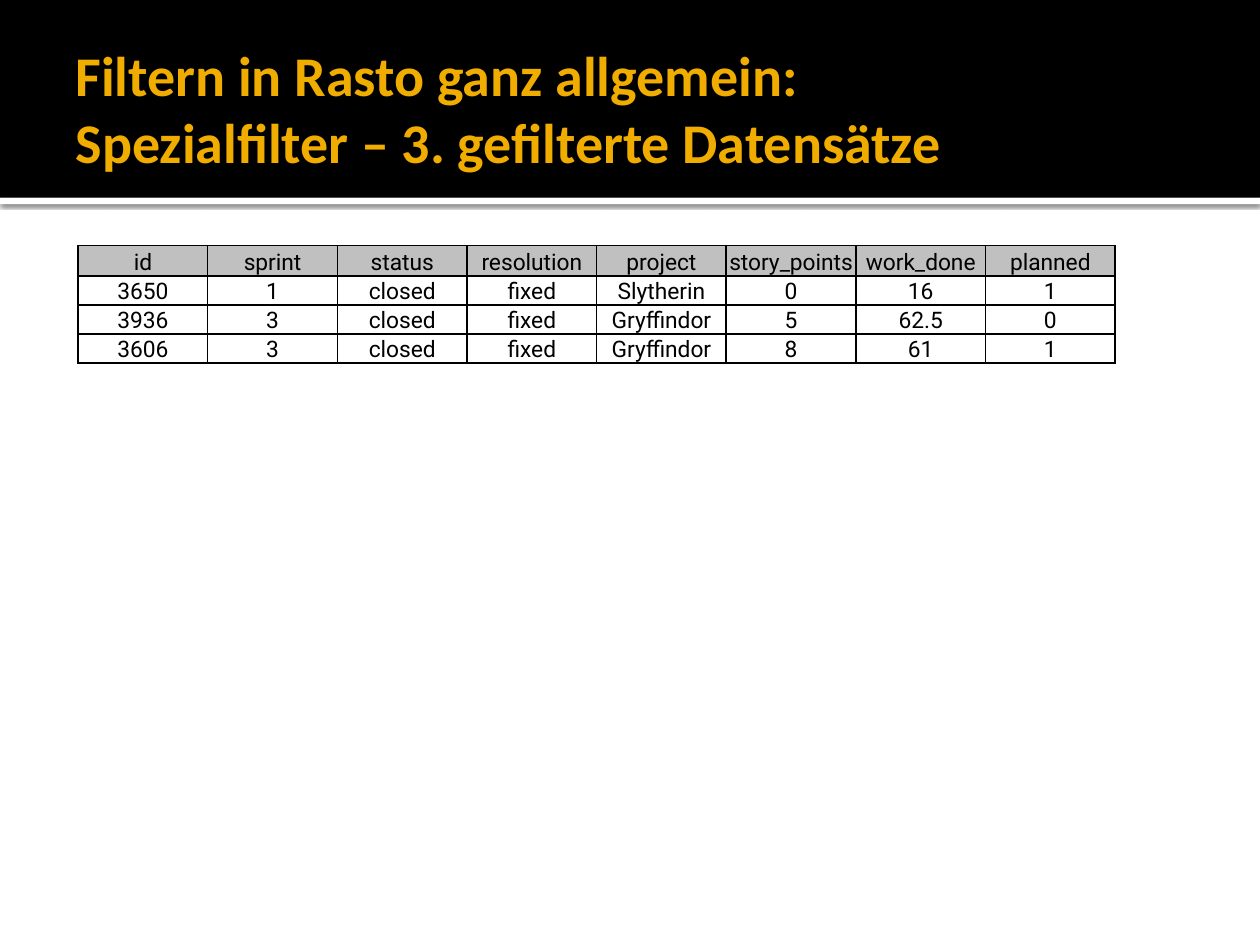
import lxml.etree
import pptx
import pptx.dml.color
import pptx.enum.shapes
import pptx.enum.text
import pptx.oxml
import pptx.oxml.ns
import pptx.util
from pptx.util import Inches

TITLE = "Filtern in Rasto ganz allgemein:\vSpezialfilter – 3. gefilterte Datensätze"
ROWS = [
    ("id", "sprint", "status", "resolution", "project",
     "story_points", "work_done", "planned"),
    ("3650", "1", "closed", "fixed", "Slytherin", "0", "16", "1"),
    ("3936", "3", "closed", "fixed", "Gryffindor", "5", "62.5", "0"),
    ("3606", "3", "closed", "fixed", "Gryffindor", "8", "61", "1"),
]
BLACK, WHITE, GOLD, GREY = "000000", "FFFFFF", "F0AD00", "C0C0C0"
HEAD = 1.57
NS = pptx.oxml.ns.nsdecls("a")
SHADOW = f"""<a:effectLst {NS}>
  <a:outerShdw blurRad="{pptx.util.Pt(2.5)}" dist="{pptx.util.Pt(0.8)}" dir="5400000">
    <a:srgbClr val="{BLACK}"><a:alpha val="60000"/></a:srgbClr>
  </a:outerShdw>
</a:effectLst>"""


def paint(fill, color):
    fill.solid()
    fill.fore_color.rgb = pptx.dml.color.RGBColor.from_string(color)


def style(frame, font, size, color, bold=False):
    for para in frame.paragraphs:
        for run in para.runs:
            run.font.name = font
            run.font.size = pptx.util.Pt(size)
            run.font.bold = bold
            run.font.color.rgb = pptx.dml.color.RGBColor.from_string(color)


def add_bar(slide, top, height, color):
    bar = slide.shapes.add_shape(pptx.enum.shapes.MSO_SHAPE.RECTANGLE,
                                 0, Inches(top), Inches(10), Inches(height))
    paint(bar.fill, color)
    bar.line.fill.background()
    bar.shadow.inherit = False
    return bar


def add_edges(cell):
    """Draw a thin black line on all four sides of the cell."""
    props = cell._tc.get_or_add_tcPr()
    for place, side in enumerate("LRTB"):
        props.insert(place, pptx.oxml.parse_xml(
            f'<a:ln{side} {NS} w="{pptx.util.Pt(1)}"><a:solidFill>'
            f'<a:srgbClr val="{BLACK}"/></a:solidFill></a:ln{side}>'))


def add_bars(slide):
    strip = add_bar(slide, HEAD, 0.05, WHITE)
    props = strip._element.spPr
    props.remove(props.find(pptx.oxml.ns.qn("a:effectLst")))
    props.append(pptx.oxml.parse_xml(SHADOW))
    add_bar(slide, 0, HEAD, BLACK)


def set_title(slide):
    title = slide.shapes.title
    slide.shapes._spTree.append(title._element)  # in front of the bars
    title.left, title.top = Inches(0.5), Inches(0.17)
    title.width, title.height = Inches(9), Inches(1.37)
    frame = title.text_frame
    frame.text = TITLE
    frame.word_wrap = True
    frame.auto_size = pptx.enum.text.MSO_AUTO_SIZE.NONE
    frame.vertical_anchor = pptx.enum.text.MSO_ANCHOR.MIDDLE
    frame.margin_left = Inches(0.1)
    frame.margin_right = frame.margin_top = frame.margin_bottom = Inches(0.05)
    frame.paragraphs[0].alignment = pptx.enum.text.PP_ALIGN.LEFT
    style(frame, "Calibri", 32, GOLD, True)


def add_grid(slide):
    table = slide.shapes.add_table(len(ROWS), len(ROWS[0]), Inches(0.62),
                                   Inches(1.95), Inches(8.23), Inches(0.93)).table
    table.first_row = table.horz_banding = False
    for r, row in enumerate(ROWS):
        table.rows[r].height = Inches(0.23 if r else 0.24)
        for c, text in enumerate(row):
            cell = table.cell(r, c)
            cell.text_frame.text = text
            cell.text_frame.paragraphs[0].alignment = pptx.enum.text.PP_ALIGN.CENTER
            cell.vertical_anchor = pptx.enum.text.MSO_ANCHOR.BOTTOM
            cell.margin_left = cell.margin_right = cell.margin_top = Inches(0.01)
            cell.margin_bottom = 0
            style(cell.text_frame, "Roboto", 13, BLACK)
            if r:
                cell.fill.background()
            else:
                paint(cell.fill, GREY)
            add_edges(cell)


def main():
    deck = pptx.Presentation()
    deck.slide_width, deck.slide_height = Inches(10), Inches(7.5)
    slide = deck.slides.add_slide(deck.slide_layouts[5])
    paint(slide.background.fill, WHITE)
    add_bars(slide)
    set_title(slide)
    add_grid(slide)
    deck.save("out.pptx")


if __name__ == "__main__":
    main()
